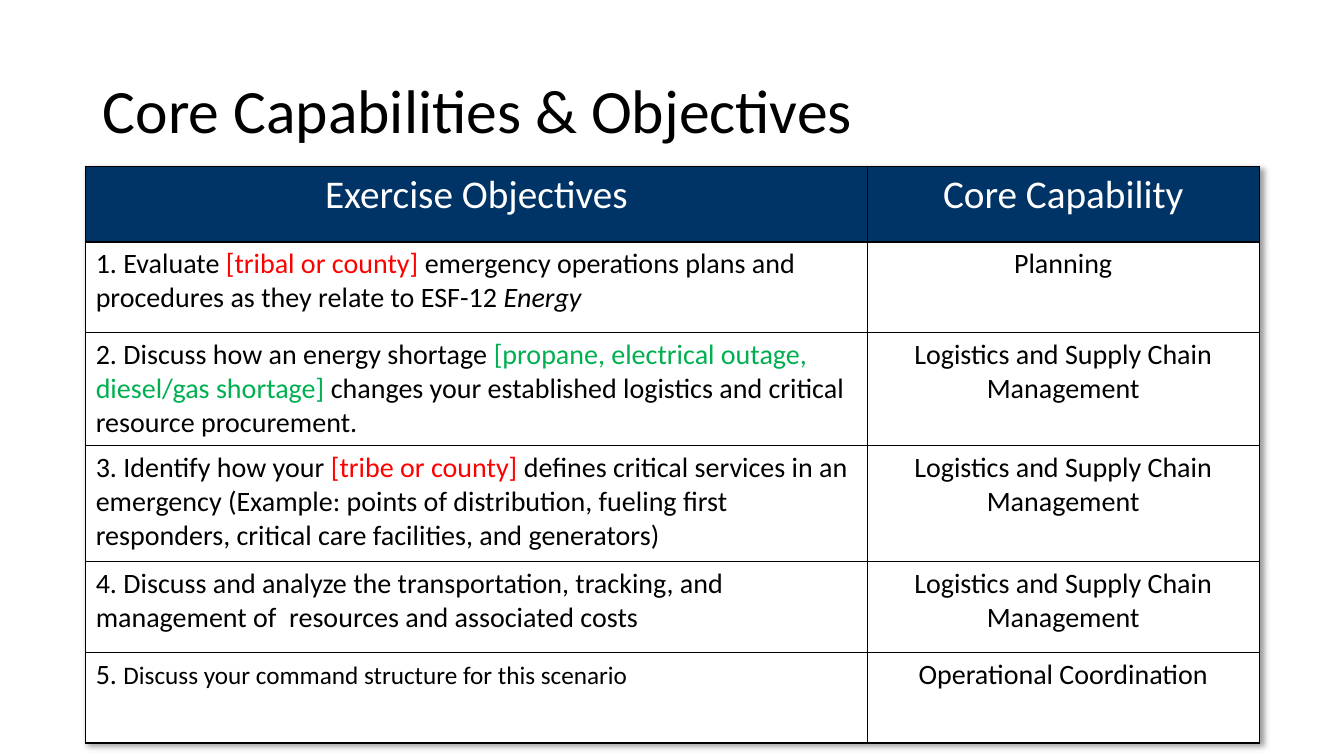
"""Build the slide that pairs exercise objectives with core capabilities."""
from lxml.etree import SubElement
from pptx import Presentation
from pptx.dml.color import RGBColor
from pptx.enum.text import MSO_ANCHOR, PP_ALIGN
from pptx.oxml import parse_xml
from pptx.oxml.ns import nsdecls, qn
from pptx.util import Inches, Pt

BLACK, WHITE, NAVY, RED, GREEN = "000000", "FFFFFF", "003366", "FF0000", "00B050"
TITLE = "Core Capabilities & Objectives"
HEADINGS = ("Exercise Objectives", "Core Capability")
LOGISTICS = "Logistics and Supply Chain Management"
OBJECTIVES = [
    ([("1. Evaluate ", {}),
      ("[tribal or county] ", {"color": RED}),
      ("emergency operations plans and procedures as they relate to ESF-12 ", {}),
      ("Energy", {"italic": True})], "Planning"),
    ([("2. Discuss how an energy shortage ", {}),
      ("[propane, electrical outage, diesel/gas shortage] ", {"color": GREEN}),
      ("changes your established logistics and critical resource procurement.", {})],
     LOGISTICS),
    ([("3. Identify how your ", {}),
      ("[tribe or county]", {"color": RED}),
      (" defines critical services in an emergency (Example: points of distribution, "
       "fueling first responders, critical care facilities, and generators)", {})],
     LOGISTICS),
    ([("4. Discuss and analyze the transportation, tracking, and management of  "
       "resources and associated costs", {})], LOGISTICS),
    ([("5. ", {}),
      ("Discuss your command structure for this scenario", {"size": 18})],
     "Operational Coordination"),
]
SLIDE_WIDTH, SLIDE_HEIGHT = 13.33, 7.5
TITLE_BOX = (0.92, 0.4, 11.5, 1.45)
TABLE_LEFT, TABLE_TOP = 0.85, 1.65
COLUMNS = (7.75, 3.89)
ROWS = (0.75, 0.9, 1.04, 1.15, 0.9, 0.9)


def rgb(value):
    """Turn a hex string into a colour."""
    return RGBColor.from_string(value)


def write(frame, pieces, align=PP_ALIGN.LEFT, spacing=None, **base):
    """Fill a text frame with one paragraph of formatted pieces."""
    paragraph = frame.paragraphs[0]
    paragraph.alignment = align
    paragraph.line_spacing = spacing
    for words, changes in pieces:
        look = {"size": 20, "color": BLACK, "italic": False, **base, **changes}
        run = paragraph.add_run()
        run.text = words
        run.font.name = "Calibri"
        run.font.size = Pt(look["size"])
        run.font.italic = look["italic"]
        run.font.color.rgb = rgb(look["color"])


def paint(cell, fill):
    """Give a cell black borders and a solid fill."""
    properties = cell._tc.get_or_add_tcPr()
    for side in ("lnL", "lnR", "lnT", "lnB"):
        border = SubElement(properties, qn(f"a:{side}"), w=str(Pt(1)))
        solid = SubElement(border, qn("a:solidFill"))
        SubElement(solid, qn("a:srgbClr"), val=BLACK)
    cell.fill.solid()
    cell.fill.fore_color.rgb = rgb(fill)


def cast_shadow(table):
    """Add a soft shadow to the lower right of the table."""
    table._tbl.tblPr.insert(0, parse_xml(
        f'<a:effectLst {nsdecls("a")}><a:outerShdw blurRad="50800" dist="38100" '
        'dir="2700000" algn="tl" rotWithShape="0"><a:srgbClr val="000000">'
        '<a:alpha val="40000"/></a:srgbClr></a:outerShdw></a:effectLst>'))


def main():
    """Place the title and the table, then save."""
    deck = Presentation()
    deck.slide_width, deck.slide_height = Inches(SLIDE_WIDTH), Inches(SLIDE_HEIGHT)
    slide = deck.slides.add_slide(deck.slide_layouts[5])

    title = slide.shapes.title
    title.left, title.top, title.width, title.height = map(Inches, TITLE_BOX)
    title.text_frame.vertical_anchor = MSO_ANCHOR.MIDDLE
    write(title.text_frame, [(TITLE, {})], spacing=0.9, size=44)

    table = slide.shapes.add_table(
        len(ROWS), len(COLUMNS), Inches(TABLE_LEFT), Inches(TABLE_TOP),
        Inches(sum(COLUMNS)), Inches(sum(ROWS))).table
    cast_shadow(table)
    for column, width in zip(table.columns, COLUMNS):
        column.width = Inches(width)
    for row, height in zip(table.rows, ROWS):
        row.height = Inches(height)

    for index, heading in enumerate(HEADINGS):
        cell = table.cell(0, index)
        paint(cell, NAVY)
        write(cell.text_frame, [(heading, {})], PP_ALIGN.CENTER, size=28, color=WHITE)
    for index, (objective, capability) in enumerate(OBJECTIVES, start=1):
        left, right = table.cell(index, 0), table.cell(index, 1)
        paint(left, WHITE)
        paint(right, WHITE)
        write(left.text_frame, objective)
        write(right.text_frame, [(capability, {})], PP_ALIGN.CENTER)

    deck.save("out.pptx")


if __name__ == "__main__":
    main()
